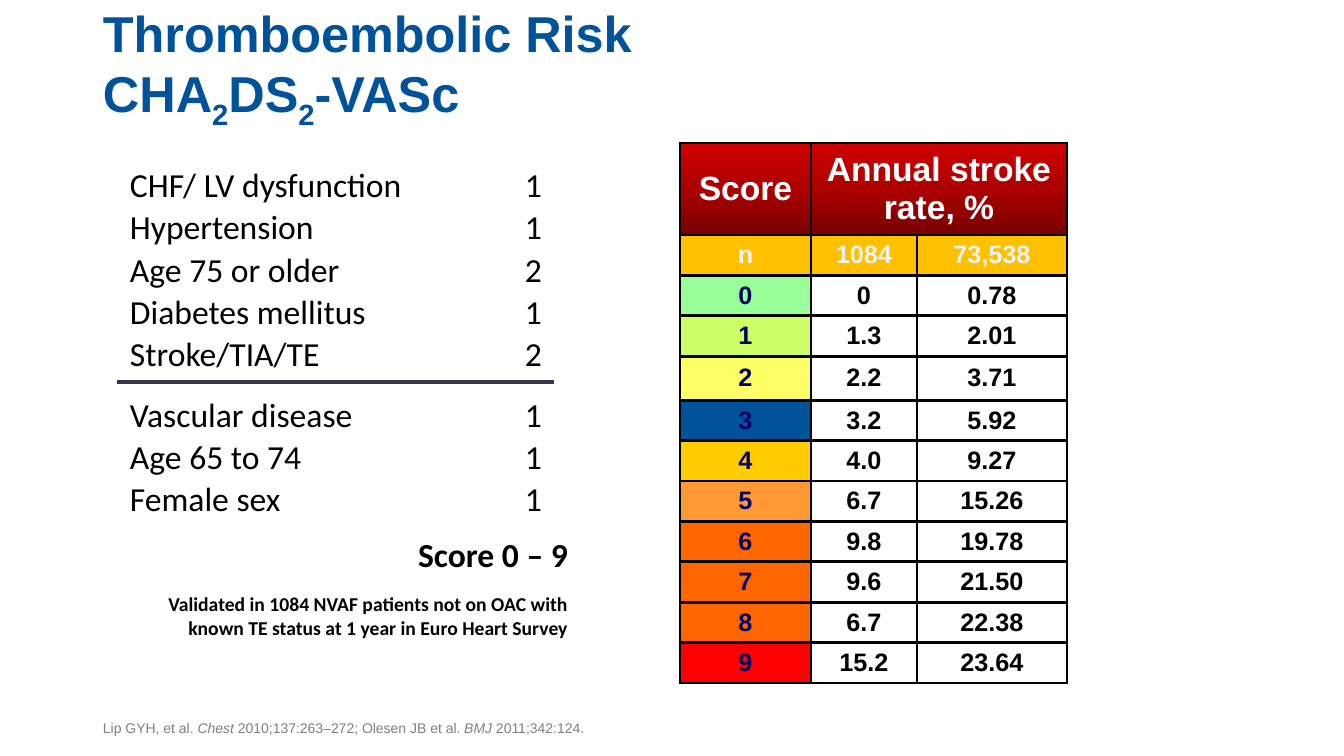
import pptx
import pptx.dml.color
import pptx.enum.shapes
import pptx.enum.text
import pptx.oxml
import pptx.oxml.ns
import pptx.util

RGB = pptx.dml.color.RGBColor
ALIGN = pptx.enum.text.PP_ALIGN
ANCHOR = pptx.enum.text.MSO_ANCHOR

BLUE = RGB(0x00, 0x53, 0x9B)
BLACK = RGB(0x00, 0x00, 0x00)
WHITE = RGB(0xFF, 0xFF, 0xFF)
GREY = RGB(0x80, 0x80, 0x80)
PALE = RGB(0xF3, 0xF3, 0xF3)
NAVY = RGB(0x00, 0x00, 0x66)
AMBER = RGB(0xFF, 0xC0, 0x00)
ORANGE = RGB(0xFF, 0x66, 0x00)
DIVIDER = RGB(0x37, 0x36, 0x48)
HEADER_STOPS = [(0, RGB(0x77, 0x00, 0x00)), (50, RGB(0xAD, 0x00, 0x00)),
                (100, RGB(0xCE, 0x00, 0x00))]

CRITERIA = [("CHF/ LV dysfunction", 1), ("Hypertension", 1), ("Age 75 or older", 2),
            ("Diabetes mellitus", 1), ("Stroke/TIA/TE", 2), ("Vascular disease", 1),
            ("Age 65 to 74", 1), ("Female sex", 1)]
FIRST_ADDED_CRITERION = 5

STROKE_RATES = [
    ("0", "0", "0.78", RGB(0x99, 0xFF, 0x99)),
    ("1", "1.3", "2.01", RGB(0xCC, 0xFF, 0x66)),
    ("2", "2.2", "3.71", RGB(0xFF, 0xFF, 0x66)),
    ("3", "3.2", "5.92", BLUE),
    ("4", "4.0", "9.27", RGB(0xFF, 0xCC, 0x00)),
    ("5", "6.7", "15.26", RGB(0xFF, 0x99, 0x33)),
    ("6", "9.8", "19.78", ORANGE),
    ("7", "9.6", "21.50", ORANGE),
    ("8", "6.7", "22.38", ORANGE),
    ("9", "15.2", "23.64", RGB(0xFF, 0x00, 0x00)),
]


def px(length):
    return pptx.util.Emu(round(length * 914400 / 100.8))


def add_run(paragraph, text, size, color, font="Arial", bold=False, italic=False):
    run = paragraph.add_run()
    run.text = text
    run.font.name = font
    run.font.size = pptx.util.Pt(size)
    run.font.bold = bold
    run.font.italic = italic
    run.font.color.rgb = color
    return run


def format_frame(frame, anchor, insets=(10, 5, 10, 5)):
    frame.word_wrap = True
    frame.auto_size = pptx.enum.text.MSO_AUTO_SIZE.NONE
    frame.vertical_anchor = anchor
    (frame.margin_left, frame.margin_top,
     frame.margin_right, frame.margin_bottom) = map(px, insets)
    return frame


def add_text_box(slide, box, anchor, insets=(10, 5, 10, 5)):
    shape = slide.shapes.add_textbox(*map(px, box))
    return format_frame(shape.text_frame, anchor, insets)


def add_title(slide, box):
    title = slide.shapes.title
    title.left, title.top, title.width, title.height = map(px, box)
    paragraph = format_frame(title.text_frame, ANCHOR.BOTTOM).paragraphs[0]
    paragraph.alignment = ALIGN.LEFT
    paragraph.line_spacing = 0.9
    add_run(paragraph, "Thromboembolic Risk", 36, BLUE, bold=True)
    paragraph.add_line_break()
    for text in ("CHA", "2", "DS", "2", "-VASc"):
        run = add_run(paragraph, text, 36, BLUE, bold=True)
        if text == "2":
            run.font._element.set("baseline", "-25000")


def add_criteria(slide, box):
    """Scored criteria, the divider between the two sets, and the total."""
    left, top, width, height = box
    frame = add_text_box(slide, box, ANCHOR.TOP, (38, 5, 10, 5))
    for index, (criterion, points) in enumerate(CRITERIA):
        paragraph = frame.add_paragraph() if index else frame.paragraphs[0]
        paragraph.line_spacing = 1.5 if index == FIRST_ADDED_CRITERION else 1.05
        properties = paragraph._p.get_or_add_pPr()
        properties.append(pptx.oxml.parse_xml(
            f'<a:tabLst {pptx.oxml.ns.nsdecls("a")}>'
            f'<a:tab pos="{px(395)}" algn="l"/></a:tabLst>'))
        add_run(paragraph, f"{criterion}\t{points}", 24, BLACK, "Calibri")

    line_top = px(top + 225)
    divider = slide.shapes.add_connector(
        pptx.enum.shapes.MSO_CONNECTOR.STRAIGHT,
        px(left + 25), line_top, px(left + 462), line_top)
    divider.line.color.rgb = DIVIDER
    divider.line.width = pptx.util.Pt(2.25)
    divider._element.spPr.append(pptx.oxml.parse_xml(
        f'<a:effectLst {pptx.oxml.ns.nsdecls("a")}/>'))

    notes = [
        ("Score 0 – 9", 24, 377, 40),
        ("Validated in 1084 NVAF patients not on OAC with "
         "known TE status at 1 year in Euro Heart Survey", 14, 431, 51),
    ]
    for text, size, offset, note_height in notes:
        note_box = (left + 55, top + offset, 421, note_height)
        paragraph = add_text_box(slide, note_box, ANCHOR.BOTTOM, (0, 0, 0, 0)).paragraphs[0]
        paragraph.alignment = ALIGN.RIGHT
        add_run(paragraph, text, size, BLACK, "Calibri", bold=True)


def add_borders(cell):
    properties = cell._tc.get_or_add_tcPr()
    for side in ("lnL", "lnR", "lnT", "lnB"):
        properties.append(pptx.oxml.parse_xml(
            f'<a:{side} {pptx.oxml.ns.nsdecls("a")} w="{pptx.util.Pt(2.25)}">'
            f'<a:solidFill><a:srgbClr val="{BLACK}"/></a:solidFill></a:{side}>'))


def fill_header(cell):
    stops = "".join(f'<a:gs pos="{position * 1000}"><a:srgbClr val="{color}"/></a:gs>'
                    for position, color in HEADER_STOPS)
    cell._tc.get_or_add_tcPr().append(pptx.oxml.parse_xml(
        f'<a:gradFill {pptx.oxml.ns.nsdecls("a")}><a:gsLst>{stops}</a:gsLst>'
        f'<a:lin ang="{270 * 60000}" scaled="0"/></a:gradFill>'))


def write_cell(cell, text, size, color):
    cell.vertical_anchor = ANCHOR.MIDDLE
    cell.margin_left = cell.margin_right = px(10)
    cell.margin_top = cell.margin_bottom = px(5)
    paragraph = cell.text_frame.paragraphs[0]
    paragraph.alignment = ALIGN.CENTER
    add_run(paragraph, text, size, color, bold=True)


def add_rate_table(slide, box):
    height = box[3]
    row_count = len(STROKE_RATES) + 2
    table = slide.shapes.add_table(row_count, 3, *map(px, box)).table
    table.first_row = table.horz_banding = False
    for column, width in zip(table.columns, (131, 106, 150)):
        column.width = px(width)
    special_heights = {0: 92, 4: 44}
    plain_height = (height - sum(special_heights.values())) / (row_count - 2)
    for index, row in enumerate(table.rows):
        row.height = px(special_heights.get(index, plain_height))
    for cell in table.iter_cells():
        add_borders(cell)

    table.cell(0, 1).merge(table.cell(0, 2))
    for column, text in enumerate(("Score", "Annual stroke rate, %")):
        write_cell(table.cell(0, column), text, 24, WHITE)
    for column in range(3):
        fill_header(table.cell(0, column))

    for column, text in enumerate(("n", "1084", "73,538")):
        cell = table.cell(1, column)
        write_cell(cell, text, 18, PALE)
        cell.fill.solid()
        cell.fill.fore_color.rgb = AMBER

    for row, (*values, score_color) in enumerate(STROKE_RATES, start=2):
        for column, text in enumerate(values):
            cell = table.cell(row, column)
            write_cell(cell, text, 18, BLACK if column else NAVY)
            if column:
                cell.fill.background()
            else:
                cell.fill.solid()
                cell.fill.fore_color.rgb = score_color


def add_references(slide, box):
    paragraph = add_text_box(slide, box, ANCHOR.BOTTOM).paragraphs[0]
    for text, italic in (("Lip GYH, et al. ", False), ("Chest", True),
                         (" 2010;137:263–272; Olesen JB et al. ", False),
                         ("BMJ", True), (" 2011;342:124.", False)):
        add_run(paragraph, text, 10, GREY, italic=italic)


def main():
    presentation = pptx.Presentation()
    presentation.slide_width, presentation.slide_height = px(1344), px(756)
    slide = presentation.slides.add_slide(presentation.slide_layouts[5])
    add_title(slide, (93, 0, 1159, 130))
    add_references(slide, (93, 701, 1159, 40))
    add_rate_table(slide, (680, 143, 387, 540))
    add_criteria(slide, (92, 157, 487, 369))
    presentation.save("out.pptx")


if __name__ == "__main__":
    main()
